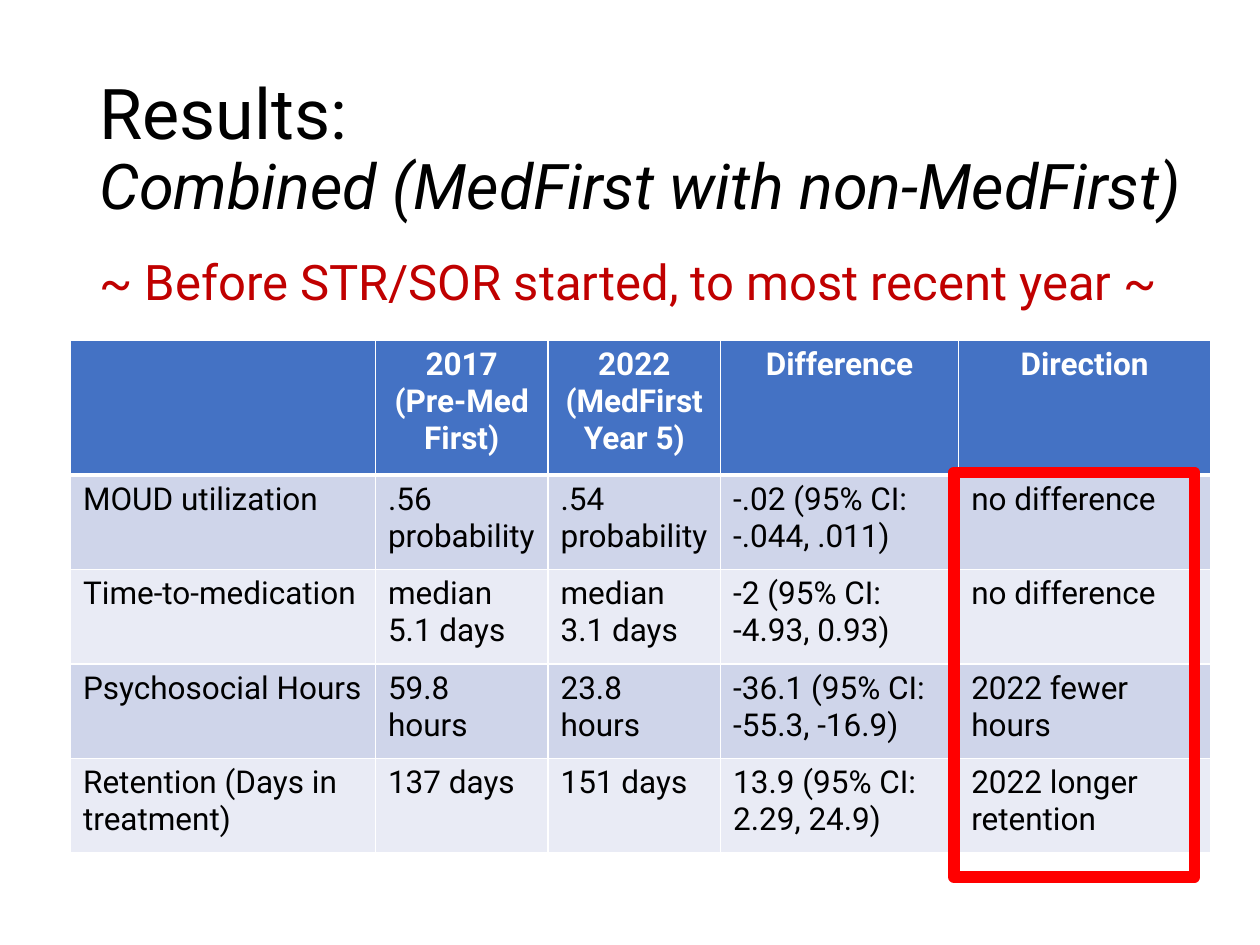
"""Build the results slide with its before-and-after table."""
from typing import NamedTuple

from lxml import etree
from pptx import Presentation, util as u
from pptx.dml.color import RGBColor
from pptx.enum import shapes, text
from pptx.oxml.ns import qn

PX = u.Inches(1) // 100
WHITE, BLACK, RED = "FFFFFF", "000000", "FF0000"
BLUE, CRIMSON = "4472C4", "C00000"
BANDS = ("CFD5EA", "E9EBF5")


class Box(NamedTuple):
    left: int
    top: int
    width: int
    height: int

    def emu(self) -> list[int]:
        return [side * PX for side in self]


class Row(NamedTuple):
    height: int
    cells: tuple[str, ...]


COLS = (242, 137, 137, 189, 200)
ROWS = (
    Row(107, ("", "2017\n(Pre-Med First)", "2022 (MedFirst Year 5)", "Difference", "Direction")),
    Row(75, ("MOUD utilization", ".56 probability", ".54 probability",
             "-.02 (95% CI:\n-.044, .011)", "no difference")),
    Row(75, ("Time-to-medication", "median\n5.1 days", "median\n3.1 days",
             "-2 (95% CI:\n-4.93, 0.93)", "no difference")),
    Row(75, ("Psychosocial Hours", "59.8 hours", "23.8 hours",
             "-36.1 (95% CI:\n-55.3, -16.9)", "2022 fewer hours")),
    Row(75, ("Retention (Days in treatment)", "137 days", "151 days",
             "13.9 (95% CI: 2.29, 24.9)", "2022 longer retention")),
)


def tint(code: str) -> RGBColor:
    return RGBColor.from_string(code)


def write(para, words: str, *, size: int = 18, color: str = BLACK,
          bold: bool = False, italic: bool = False) -> None:
    run = para.add_run()
    run.text = words
    font = run.font
    font.name, font.size = "Roboto", u.Pt(size)
    font.bold, font.italic = bold, italic
    font.color.rgb = tint(color)


def frame(slide, box: Box, anchor=text.MSO_ANCHOR.TOP):
    body = slide.shapes.add_textbox(*box.emu()).text_frame
    body.word_wrap, body.vertical_anchor = True, anchor
    para = body.paragraphs[0]
    para.line_spacing = 0.9
    return para


def edge(cell, side: str, width: int) -> None:
    line = etree.SubElement(cell._tc.get_or_add_tcPr(), qn(f"a:ln{side}"), w=str(u.Pt(width)))
    fill = etree.SubElement(line, qn("a:solidFill"))
    etree.SubElement(fill, qn("a:srgbClr"), val=WHITE)


def fill_cell(cell, words: str, row: int) -> None:
    head = row == 0
    for side in "LRTB":
        thick = (row, side) in ((0, "B"), (1, "T"))
        edge(cell, side, 3 if thick else 1)
    cell.fill.solid()
    cell.fill.fore_color.rgb = tint(BLUE if head else BANDS[(row - 1) % 2])
    if not words:
        return
    for index, line in enumerate(words.split("\n")):
        body = cell.text_frame
        para = body.add_paragraph() if index else body.paragraphs[0]
        para.alignment = text.PP_ALIGN.CENTER if head else text.PP_ALIGN.LEFT
        write(para, line, color=WHITE if head else BLACK, bold=head)


def draw_table(slide, box: Box) -> None:
    table = slide.shapes.add_table(len(ROWS), len(COLS), *box.emu()).table
    for col, width in zip(table.columns, COLS):
        col.width = width * PX
    for r, row in enumerate(ROWS):
        table.rows[r].height = row.height * PX
        for c, words in enumerate(row.cells):
            fill_cell(table.cell(r, c), words, r)


def draw_mark(slide, box: Box) -> None:
    mark = slide.shapes.add_shape(shapes.MSO_SHAPE.RECTANGLE, *box.emu())
    mark.shadow.inherit = False
    mark.fill.background()
    mark.line.color.rgb = tint(RED)
    mark.line.width = u.Pt(6.75)


def main() -> None:
    deck = Presentation()
    deck.slide_width, deck.slide_height = 1000 * PX, 750 * PX
    slide = deck.slides.add_slide(deck.slide_layouts[6])

    title = frame(slide, Box(69, 40, 891, 160), text.MSO_ANCHOR.MIDDLE)
    write(title, "Results:", size=40)
    title.add_line_break()
    write(title, "Combined (MedFirst with non-MedFirst)", size=36, italic=True)

    note = frame(slide, Box(69, 200, 862, 476))
    note.space_before = u.Pt(10)
    write(note, "~ Before STR/SOR started, to most recent year ~", size=28, color=CRIMSON)

    draw_table(slide, Box(56, 270, sum(COLS), sum(row.height for row in ROWS)))
    draw_mark(slide, Box(757, 375, 191, 321))
    deck.save("out.pptx")


if __name__ == "__main__":
    main()
